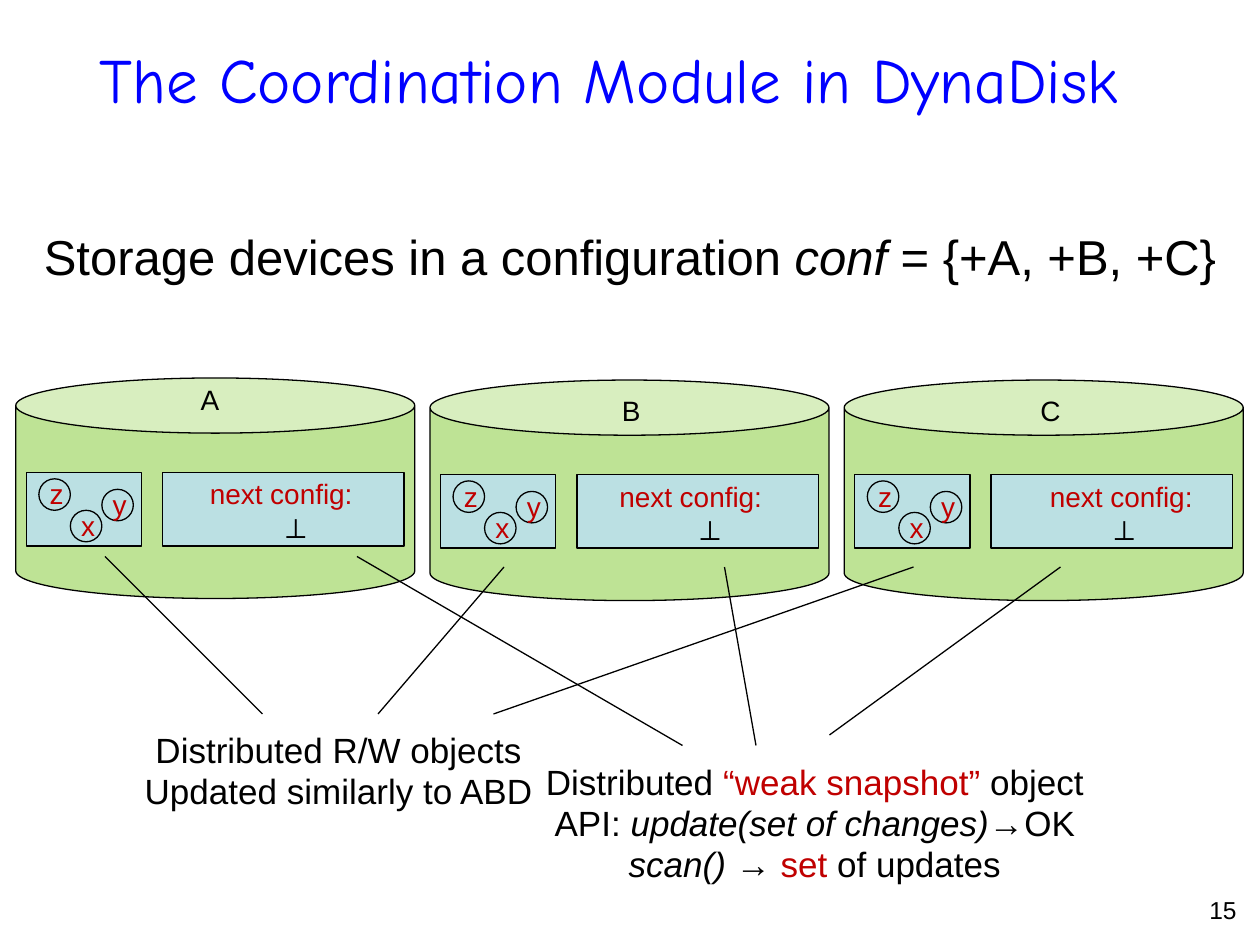
from dataclasses import dataclass
from typing import NamedTuple

from lxml.etree import SubElement
from pptx import Presentation
from pptx.dml.color import RGBColor
from pptx.enum.shapes import MSO_CONNECTOR, MSO_SHAPE
from pptx.enum.text import MSO_ANCHOR, MSO_AUTO_SIZE, PP_ALIGN
from pptx.oxml.ns import qn
from pptx.util import Inches, Pt

# Grid: 120 columns by 90 rows, 12 to the inch
COLS, ROWS, PER_INCH = 120, 90, 12
BLACK, RED, BLUE = "000000", "C00000", "0000FF"
GREEN, TEAL = "BEE395", "BBE0E3"
PITCH = 39.45


class Box(NamedTuple):
    x: float
    y: float
    w: float
    h: float


class Run(NamedTuple):
    text: str
    color: str = BLACK
    italic: bool = False


@dataclass
class Device:
    name: str
    y: float
    name_x: float
    name_y: float
    config_x: float


class Link(NamedTuple):
    x1: float
    y1: float
    x2: float
    y2: float


DEVICES = [
    Device("A", 36, 17.9, 36, 18.8),
    Device("B", 36.2, 58, 37, 57.8),
    Device("C", 36.2, 97.9, 37, 98.8),
]
# Objects held by each device, as offsets from its corner
OBJECTS = [("z", 2.2, 9.6), ("x", 5.2, 12.6), ("y", 8.2, 10.6)]
OBJECT_LINKS = [
    Link(25, 68, 10, 53), Link(48, 54, 36, 68), Link(87, 54, 47, 68),
]
SNAPSHOT_LINKS = [
    Link(34, 53, 65, 71), Link(69, 54, 72, 71), Link(101, 54, 79, 70),
]


def grid(n: float) -> int:
    return Inches(n / PER_INCH)


def rgb(color: str) -> RGBColor:
    return RGBColor.from_string(color)


def write(tf, lines: list[list[Run]], size: float, align=PP_ALIGN.CENTER,
          font: str = "Arial", bold: bool = False, spacing: float = 0.98) -> None:
    for i, runs in enumerate(lines):
        p = tf.paragraphs[0] if i == 0 else tf.add_paragraph()
        p.alignment, p.line_spacing = align, spacing
        p.font.size, p.font.name, p.font.bold = Pt(size), font, bold
        for run in runs:
            r = p.add_run()
            r.text = run.text
            r.font.color.rgb = rgb(run.color)
            if run.italic:
                r.font.italic = True


def add_text(shapes, box: Box, lines: list[list[Run]], size: float,
             wrap: bool = False, grow: bool = True, **style):
    sp = shapes.add_textbox(*map(grid, box))
    tf = sp.text_frame
    tf.word_wrap = wrap
    tf.auto_size = MSO_AUTO_SIZE.SHAPE_TO_FIT_TEXT if grow else MSO_AUTO_SIZE.NONE
    write(tf, lines, size, **style)
    return sp


def add_outlined(shapes, kind: MSO_SHAPE, box: Box, fill: str):
    sp = shapes.add_shape(kind, *map(grid, box))
    sp.shadow.inherit = False
    sp.fill.solid()
    sp.fill.fore_color.rgb = rgb(fill)
    sp.line.color.rgb = rgb(BLACK)
    sp.line.width = Pt(0.75)
    return sp


def add_link(shapes, link: Link) -> None:
    line = shapes.add_connector(MSO_CONNECTOR.STRAIGHT, *map(grid, link))
    line.line.color.rgb = rgb(BLACK)
    line.line.width = Pt(0.75)
    SubElement(line._element.spPr, qn("a:effectLst"))


def add_object(shapes, label: str, x: float, y: float) -> None:
    group = shapes.add_group_shape().shapes
    add_outlined(group, MSO_SHAPE.OVAL, Box(x, y, 3, 3), TEAL)
    add_text(group, Box(x - 0.15, y - 0.6, 3.7, 4.3), [[Run(label, RED)]], 16)


def add_device(shapes, x: float, d: Device) -> None:
    can = add_outlined(shapes, MSO_SHAPE.CAN, Box(x, d.y, 38, 21), GREEN)
    can.adjustments[0] = 0.25
    for dx, width in ((1, 11), (14, 23)):
        add_outlined(shapes, MSO_SHAPE.RECTANGLE, Box(x + dx, d.y + 9, width, 7), TEAL)
    for label, dx, dy in OBJECTS:
        add_object(shapes, label, x + dx, d.y + dy)
    add_text(shapes, Box(d.config_x, d.y + 9, 16.2, 4.3),
             [[Run("next config:", RED)]], 16, align=PP_ALIGN.LEFT)
    add_text(shapes, Box(x + 24, d.y + 11.85, 4.4, 4.8), [[Run("⊥")]], 18, bold=True)
    add_text(shapes, Box(d.name_x, d.name_y, 4.2, 4.3), [[Run(d.name)]], 16)


def main() -> None:
    prs = Presentation()
    prs.slide_width, prs.slide_height = grid(COLS), grid(ROWS)
    s = prs.slides.add_slide(prs.slide_layouts[5])

    # Title
    title = s.shapes.title
    title.left, title.top, title.width, title.height = map(grid, Box(5, 0, 108, 15))
    title.text_frame.vertical_anchor = MSO_ANCHOR.MIDDLE
    write(title.text_frame, [[Run("The Coordination Module in DynaDisk ", BLUE)]],
          36, font="Comic Neue", spacing=1.0)

    # Statement
    body = add_text(s.shapes, Box(3, 21, 115, 59.4), [[
        Run("Storage devices in a configuration "), Run("conf", italic=True),
        Run(" = {+A, +B, +C}")]], 28, wrap=True, grow=False,
        align=PP_ALIGN.LEFT, spacing=1.0)
    body.text_frame.paragraphs[0].space_before = Pt(5.6)

    # Storage devices
    for i, device in enumerate(DEVICES):
        add_device(s.shapes, 1.5 + i * PITCH, device)

    # Links and their explanations
    for link in OBJECT_LINKS + SNAPSHOT_LINKS:
        add_link(s.shapes, link)
    add_text(s.shapes, Box(12.4, 69, 39.7, 9.1), [
        [Run("Distributed R/W objects")], [Run("Updated similarly to ABD")]], 20)
    add_text(s.shapes, Box(46, 72, 63.2, 13.1), [
        [Run("Distributed "), Run("“weak snapshot” ", RED), Run("object")],
        [Run("API:"), Run(" update(set of changes)→", italic=True), Run("OK")],
        [Run("scan() ", italic=True), Run("→ "), Run("set", RED), Run(" of updates")],
    ], 20, wrap=True)

    # Slide number
    add_text(s.shapes, Box(114, 84.7, 6, 6.2), [[Run("15")]], 14, wrap=True,
             grow=False, align=PP_ALIGN.LEFT, spacing=1.0)

    prs.save("out.pptx")


if __name__ == "__main__":
    main()
